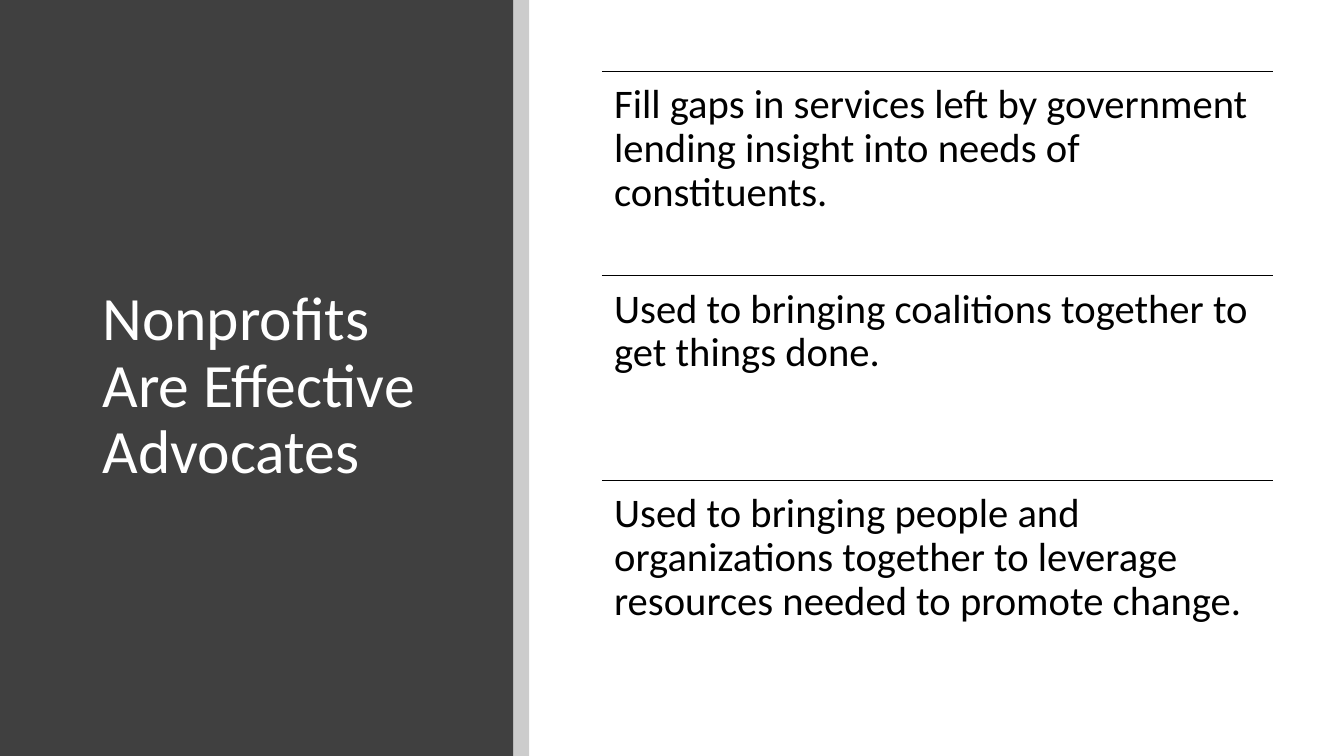
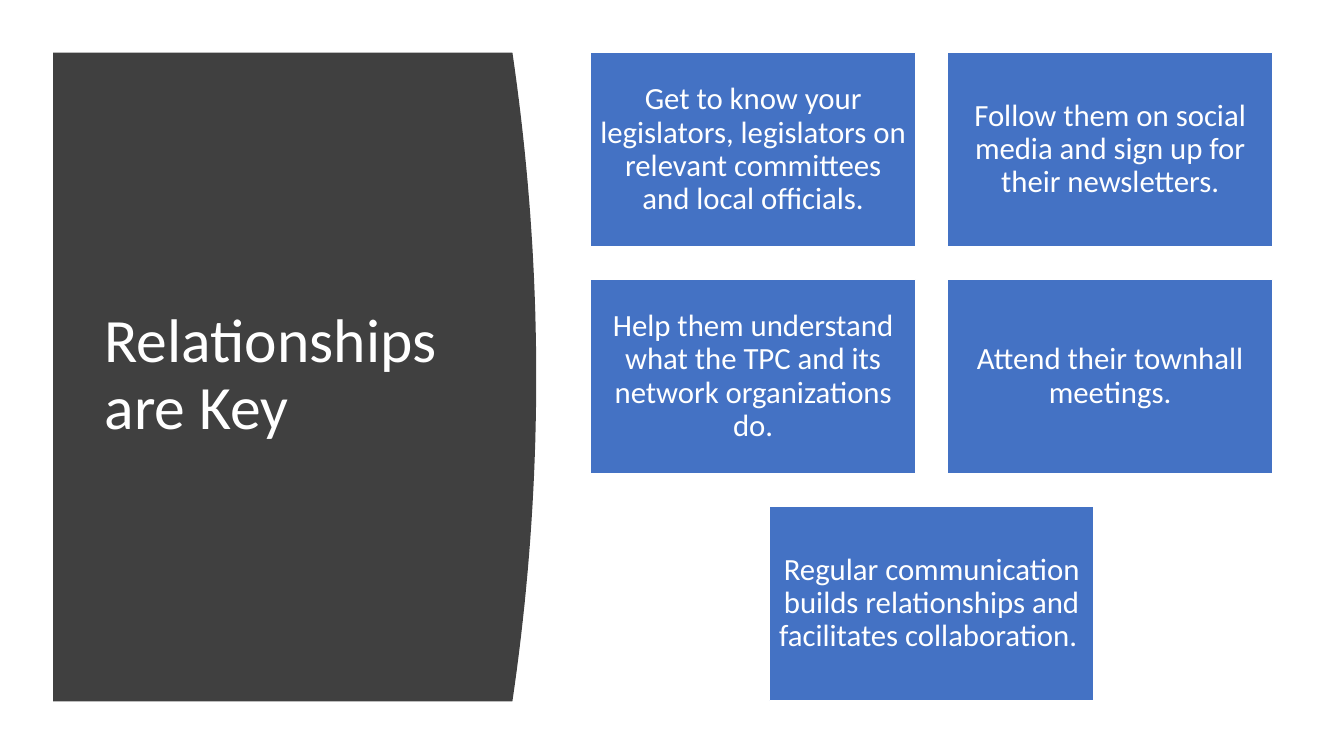
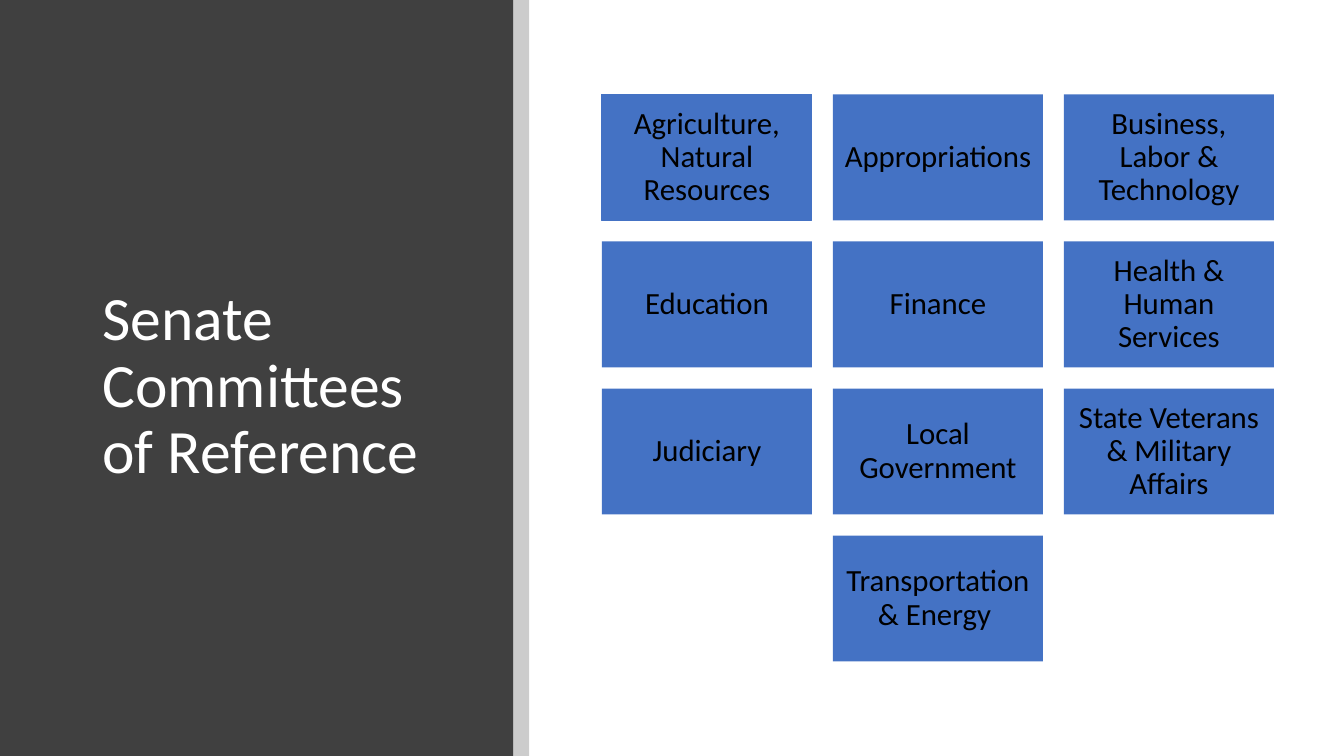
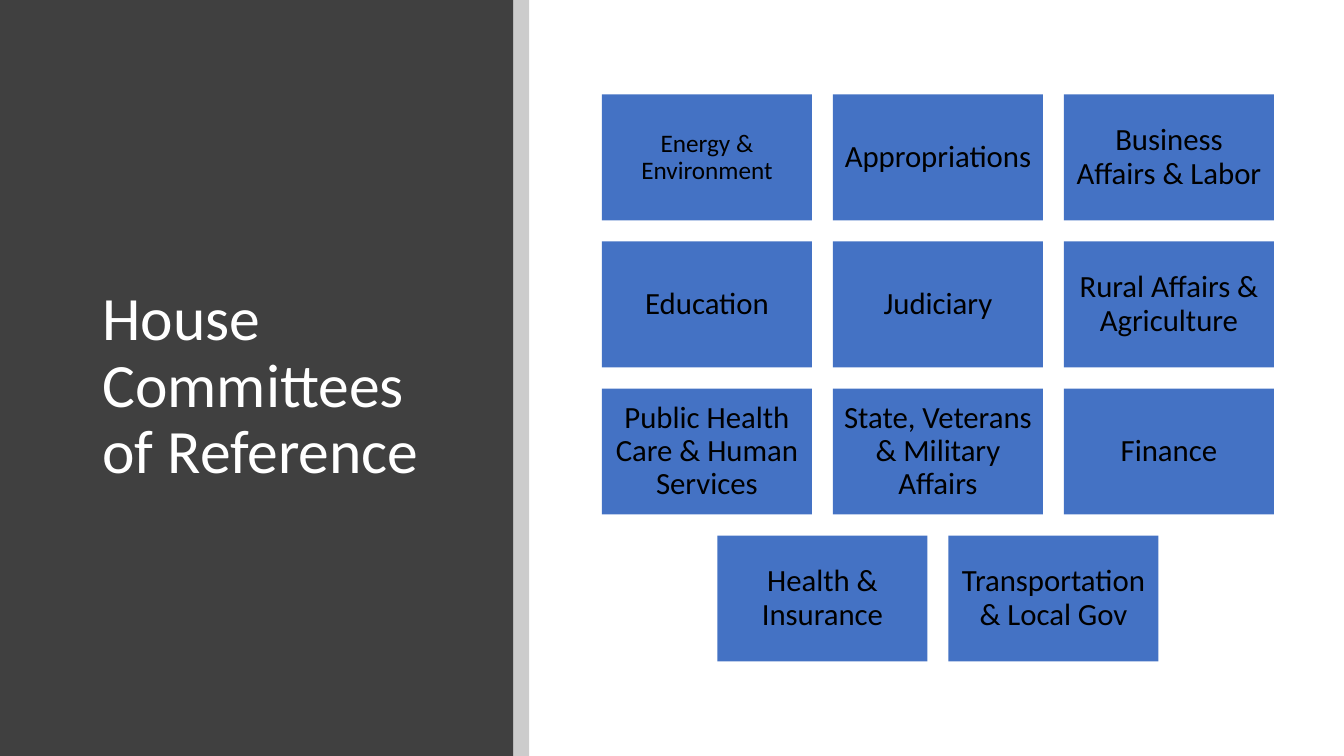
from pptx import Presentation
from pptx.dml.color import RGBColor
from pptx.enum.shapes import MSO_CONNECTOR, MSO_SHAPE
from pptx.enum.text import MSO_ANCHOR, MSO_AUTO_SIZE, PP_ALIGN
from pptx.oxml.ns import qn
from pptx.util import Pt
from lxml.etree import SubElement

# Content
ADVOCATES = (
    "Nonprofits Are Effective Advocates",
    ["Fill gaps in services left by government lending insight into needs of constituents.",
     "Used to bringing coalitions together to get things done.",
     "Used to bringing people and organizations together to leverage resources "
     "needed to promote change."],
)
RELATIONSHIPS = (
    "Relationships are Key",
    ["Get to know your legislators, legislators on relevant committees and local officials.",
     "Follow them on social media and sign up for their newsletters.",
     "Help them understand what the TPC and its network organizations do.",
     "Attend their townhall meetings.",
     "Regular communication builds relationships and facilitates collaboration. "],
)
SENATE = (
    "Senate Committees of Reference",
    ["Agriculture, Natural Resources", "Appropriations", "Business, Labor & Technology",
     "Education", "Finance", "Health & Human Services",
     "Judiciary", "Local Government", "State Veterans & Military Affairs",
     "Transportation & Energy "],
)
HOUSE = (
    "House Committees of Reference",
    ["Energy & Environment", "Appropriations", "Business Affairs & Labor",
     "Education", "Judiciary", "Rural Affairs & Agriculture",
     "Public Health Care & Human Services", "State, Veterans & Military Affairs", "Finance",
     "Health & Insurance", "Transportation & Local Gov"],
)

# Shared style
FONT = "Calibri"
DARK = RGBColor(0x40, 0x40, 0x40)
BLUE = RGBColor(0x44, 0x72, 0xC4)
WHITE = RGBColor(0xFF, 0xFF, 0xFF)
BLACK = RGBColor(0, 0, 0)
SLIDE_WIDTH, SLIDE_HEIGHT = 960, 540
BAND_WIDTH, STRIP_WIDTH = 366.5, 11.5
STRIP_OPACITY = 20
BAND_TITLE = (66, 64, 263, 425.5)
CURVE_TITLE = (67.5, 80, 269.5, 377)

# Grids: left, top, cell width, cell height, column step, row step, columns
RELATIONSHIP_GRID = (422, 37.5, 232, 139, 255, 162, 2)
COMMITTEE_GRID = (430, 67.5, 150, 90, 165, 105, 3)


def set_values(target, values):
    for name, value in values.items():
        setattr(target, name, value)


def write(shape, text, size, color, inset=None, align=PP_ALIGN.LEFT, anchor=MSO_ANCHOR.MIDDLE):
    frame = shape.text_frame
    frame.text = text
    set_values(frame, {"word_wrap": True, "auto_size": MSO_AUTO_SIZE.NONE,
                       "vertical_anchor": anchor})
    if inset is not None:
        set_values(frame, {f"margin_{side}": Pt(inset)
                           for side in ("left", "top", "right", "bottom")})
    para = frame.paragraphs[0]
    set_values(para, {"alignment": align, "line_spacing": 0.9})
    span = para.runs[0]
    set_values(span.font, {"name": FONT, "size": Pt(size)})
    span.font.color.rgb = color


def paint(shape, fill, outline=None, width=1):
    shape.shadow.inherit = False
    shape.fill.solid()
    shape.fill.fore_color.rgb = fill
    if outline is None:
        shape.line.fill.background()
    else:
        shape.line.color.rgb = outline
        shape.line.width = Pt(width)


def add_box(page, place, fill, outline=None, width=1):
    box = page.shapes.add_shape(MSO_SHAPE.RECTANGLE, *map(Pt, place))
    paint(box, fill, outline, width)
    return box


def add_title(page, text, place):
    title = page.shapes.title
    set_values(title, dict(zip(("left", "top", "width", "height"), map(Pt, place))))
    write(title, text, 44, WHITE)
    # Bring the title in front of the dark panel
    title.element.getparent().append(title.element)


def add_page(deck):
    return deck.slides.add_slide(deck.slide_layouts.get_by_name("Title Only"))


def add_band_page(deck, title):
    page = add_page(deck)
    add_box(page, (0, 0, BAND_WIDTH, SLIDE_HEIGHT), DARK)
    add_title(page, title, BAND_TITLE)
    strip = add_box(page, (BAND_WIDTH, 0, STRIP_WIDTH, SLIDE_HEIGHT), BLACK)
    color = strip.element.spPr.find(qn("a:solidFill"))[0]
    SubElement(color, qn("a:alpha"), val=str(STRIP_OPACITY * 1000))
    return page


def add_curve_page(deck, title):
    page = add_page(deck)
    left, top, right, bottom = 38, 37.5, 366, 501
    bulge, steps = 17, 40
    middle, half = (top + bottom) / 2, (bottom - top) / 2
    # The right edge is a shallow parabola
    edge = []
    for step in range(steps + 1):
        offset = 2 * step / steps - 1
        edge.append((Pt(right + bulge * (1 - offset ** 2)), Pt(middle + half * offset)))
    builder = page.shapes.build_freeform(Pt(left), Pt(top))
    builder.add_line_segments(edge + [(Pt(left), Pt(bottom))], close=True)
    paint(builder.convert_to_shape(), DARK)
    add_title(page, title, CURVE_TITLE)
    return page


def add_ruled_texts(page, texts):
    left, top, width, step = 430, 51, 479.5, 146
    for row, text in enumerate(texts):
        y = top + row * step
        rule = page.shapes.add_connector(
            MSO_CONNECTOR.STRAIGHT, Pt(left), Pt(y), Pt(left + width), Pt(y))
        rule.line.color.rgb = BLACK
        rule.line.width = Pt(0.5)
        SubElement(rule.element.spPr, qn("a:effectLst"))
        box = page.shapes.add_textbox(Pt(left), Pt(y), Pt(width), Pt(step))
        write(box, text, 29, BLACK, inset=8.7, anchor=MSO_ANCHOR.TOP)


def add_grid(page, texts, grid, color, outline=None, first_size=22, first_outline=None):
    left, top, width, height, column_step, row_step, columns = grid
    for index, text in enumerate(texts):
        row, column = divmod(index, columns)
        # A short last row is centred
        missing = max(0, columns * (row + 1) - len(texts))
        x = left + (column + missing / 2) * column_step
        size = 22 if index else first_size
        line = outline if index else first_outline or outline
        box = add_box(page, (x, top + row * row_step, width, height), BLUE, line,
                      0.75 if line == BLUE else 1)
        write(box, text, size, color, inset=0.3 * size, align=PP_ALIGN.CENTER)


def main():
    deck = Presentation()
    set_values(deck, {"slide_width": Pt(SLIDE_WIDTH), "slide_height": Pt(SLIDE_HEIGHT)})

    title, texts = ADVOCATES
    add_ruled_texts(add_band_page(deck, title), texts)

    title, texts = RELATIONSHIPS
    add_grid(add_curve_page(deck, title), texts, RELATIONSHIP_GRID, WHITE, outline=WHITE)

    # Committee slides differ only in the first cell
    for (title, texts), first in ((SENATE, {"first_outline": BLUE}), (HOUSE, {"first_size": 18})):
        add_grid(add_band_page(deck, title), texts, COMMITTEE_GRID, BLACK, **first)

    deck.save("out.pptx")


if __name__ == "__main__":
    main()
